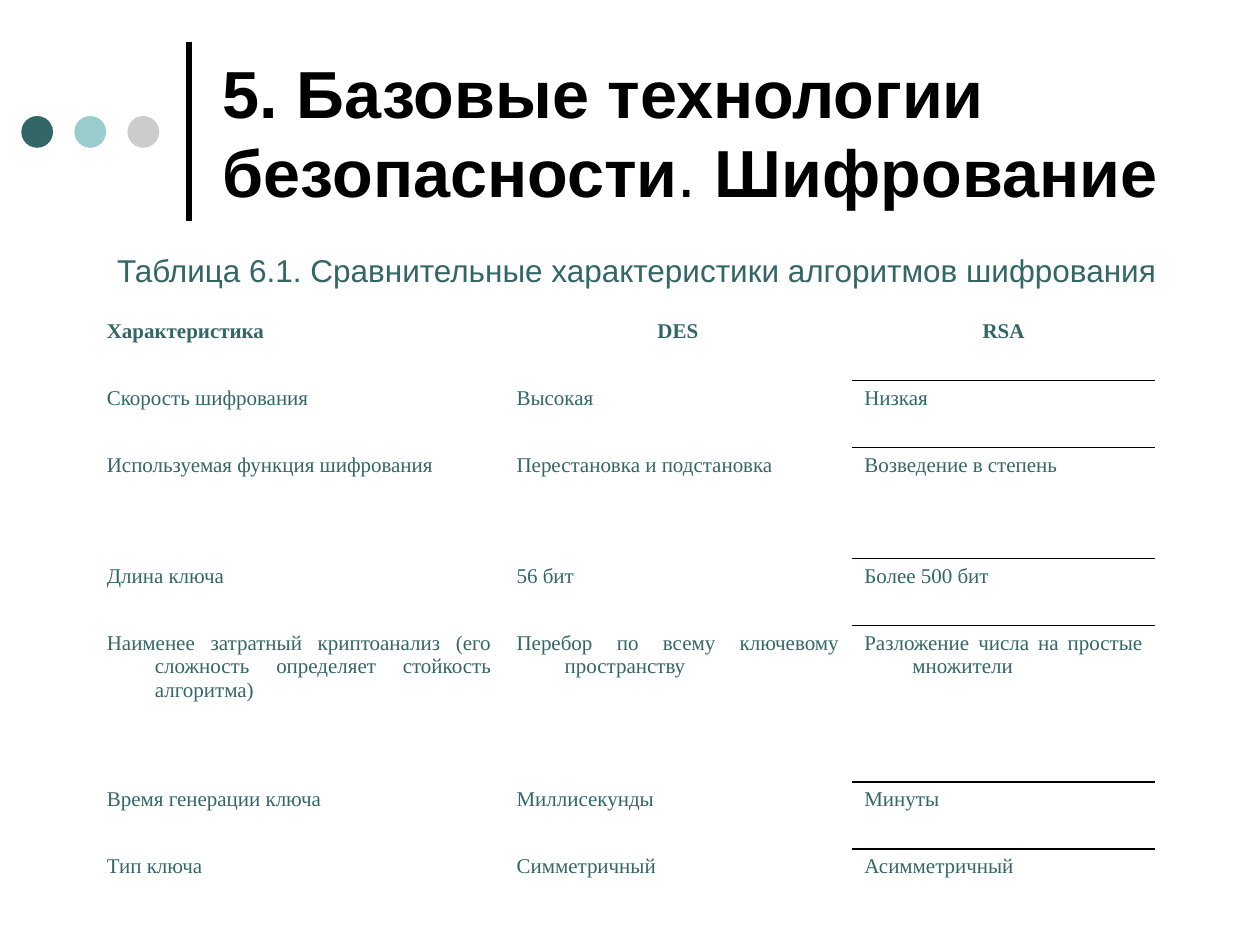
"""Build a slide that compares two encryption algorithms in a table."""
from lxml import etree
from pptx import Presentation
from pptx import util as u
from pptx.dml.color import RGBColor
from pptx.enum import shapes, text
from pptx.oxml import ns

COLORS = {"black": "000000", "teal": "336666", "aqua": "99CCCC", "gray": "CCCCCC"}
TITLE = [("5. Базовые технологии безопасности", True), (". ", False), ("Шифрование", True)]
CAPTION = "Таблица 6.1. Сравнительные характеристики алгоритмов шифрования "
ROWS = [
    ("Характеристика", "DES", "RSA"),
    ("Скорость шифрования", "Высокая", "Низкая"),
    ("Используемая функция шифрования", "Перестановка и подстановка", "Возведение в степень"),
    ("Длина ключа", "56 бит", "Более 500 бит"),
    ("Наименее затратный криптоанализ (его сложность определяет стойкость алгоритма)",
     "Перебор по всему ключевому пространству", "Разложение числа на простые множители"),
    ("Время генерации ключа", "Миллисекунды", "Минуты"),
    ("Тип ключа", "Симметричный", "Асимметричный"),
]
COL_WIDTHS = [8.26, 7.01, 6.12]
ROW_HEIGHTS = [1.35, 1.35, 2.24, 1.35, 3.15, 1.35, 1.35]


def rgb(name):
    return RGBColor.from_string(COLORS[name])


def box(*lengths):
    return [u.Cm(n) for n in lengths]


def format_run(r, font, size, color, bold=False):
    r.font.name, r.font.size, r.font.bold = font, u.Pt(size), bold
    r.font.color.rgb = rgb(color)


def add_rule(s):
    line = s.shapes.add_connector(shapes.MSO_CONNECTOR.STRAIGHT, *box(3.81, 4.45, 3.81, 0.84))
    line.line.color.rgb = rgb("black")
    line.line.width = u.Pt(3)
    etree.SubElement(line._element.spPr, ns.qn("a:effectLst"))


def add_dots(s):
    for i, color in enumerate(("teal", "aqua", "gray")):
        dot = s.shapes.add_shape(shapes.MSO_SHAPE.OVAL, *box(0.43 + 1.07 * i, 2.34, 0.64, 0.64))
        dot.shadow.inherit = False
        dot.fill.solid()
        dot.fill.fore_color.rgb = rgb(color)
        dot.line.fill.background()


def set_title(s):
    sp = s.shapes.title
    sp.left, sp.top, sp.width, sp.height = box(4.24, 0.53, 19.48, 4.24)
    tf = sp.text_frame
    tf.word_wrap = True
    tf.auto_size = text.MSO_AUTO_SIZE.NONE
    tf.vertical_anchor = text.MSO_ANCHOR.MIDDLE
    p = tf.paragraphs[0]
    p.alignment = text.PP_ALIGN.LEFT
    for words, bold in TITLE:
        r = p.add_run()
        r.text = words
        format_run(r, "Arial", 38, "black", bold)


def add_caption(s):
    tf = s.shapes.add_textbox(*box(2.11, 4.93, 21.74, 1.02)).text_frame
    tf.word_wrap = False
    tf.auto_size = text.MSO_AUTO_SIZE.SHAPE_TO_FIT_TEXT
    tf.vertical_anchor = text.MSO_ANCHOR.MIDDLE
    p = tf.paragraphs[0]
    p.text = CAPTION
    p.alignment = text.PP_ALIGN.JUSTIFY
    format_run(p.runs[0], "Arial", 18, "teal")


def set_borders(cell, visible):
    tc_pr = cell._tc.get_or_add_tcPr()
    for side in "LRTB":
        ln = etree.SubElement(tc_pr, ns.qn(f"a:ln{side}"))
        if side in visible:
            ln.set("w", str(u.Pt(1)))
            fill = etree.SubElement(ln, ns.qn("a:solidFill"))
            etree.SubElement(fill, ns.qn("a:srgbClr")).set("val", COLORS["black"])
        else:
            ln.set("w", "0")
            etree.SubElement(ln, ns.qn("a:noFill"))


def fill_cell(cell, words, header, centered, visible):
    set_borders(cell, visible)
    cell.fill.background()
    p = cell.text_frame.paragraphs[0]
    p.text = words
    p.alignment = text.PP_ALIGN.CENTER if centered else text.PP_ALIGN.JUSTIFY
    p_pr = p._p.get_or_add_pPr()
    p_pr.set("marL", str(u.Cm(0.97)))
    p_pr.set("indent", str(-u.Cm(0.97)))
    format_run(p.runs[0], "Times New Roman", 12, "teal", header)


def add_comparison(s):
    size = box(1.9, 6.32, sum(COL_WIDTHS), sum(ROW_HEIGHTS))
    table = s.shapes.add_table(len(ROWS), len(COL_WIDTHS), *size).table
    table.first_row = table.horz_banding = False
    for col, width in zip(table.columns, COL_WIDTHS):
        col.width = u.Cm(width)
    last_row, last_col = len(ROWS) - 1, len(COL_WIDTHS) - 1
    for i, (row, height) in enumerate(zip(ROWS, ROW_HEIGHTS)):
        table.rows[i].height = u.Cm(height)
        for j, words in enumerate(row):
            visible = ""
            if j == last_col:
                visible = ("T" if i > 0 else "") + ("B" if i < last_row else "")
            fill_cell(table.cell(i, j), words, i == 0, i == 0 and j > 0, visible)


def main():
    prs = Presentation()
    prs.slide_width, prs.slide_height = box(25.4, 19.05)
    s = prs.slides.add_slide(prs.slide_layouts[5])
    add_rule(s)
    add_dots(s)
    set_title(s)
    add_comparison(s)
    add_caption(s)
    prs.save("out.pptx")


if __name__ == "__main__":
    main()
